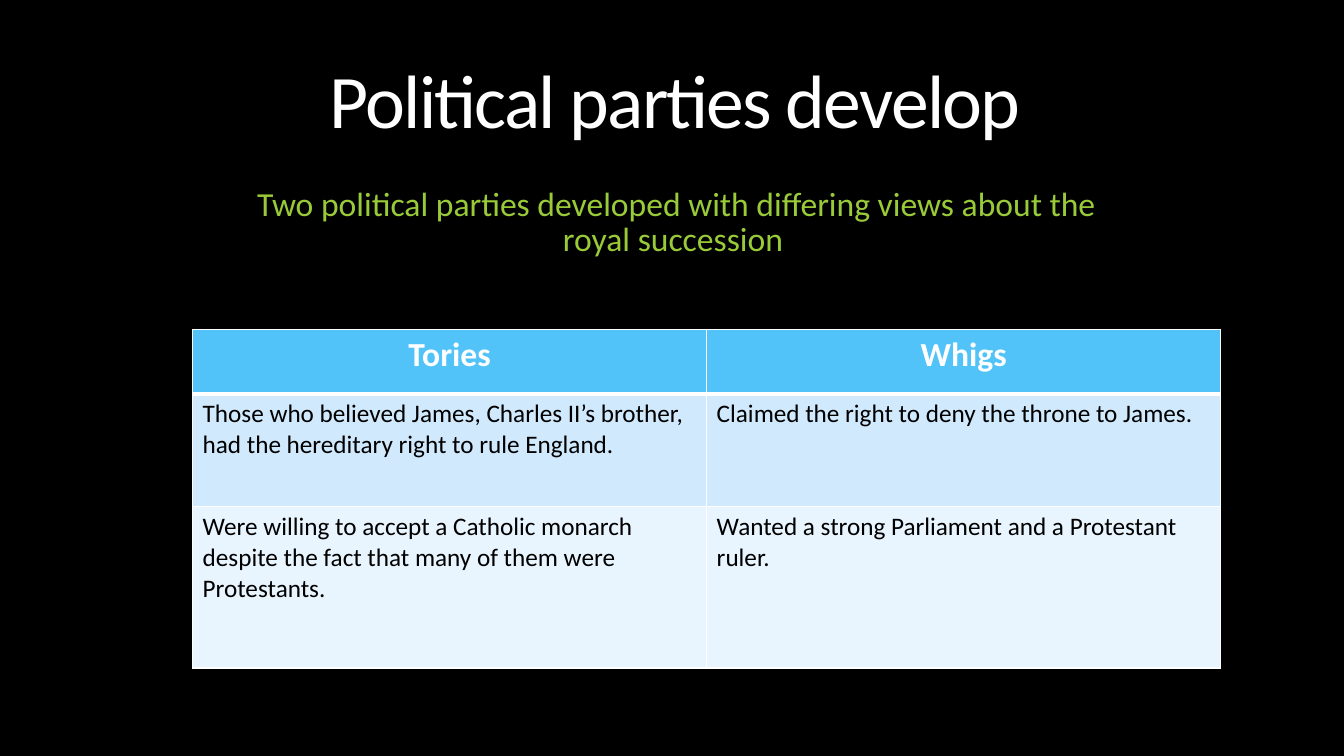
from dataclasses import dataclass

from lxml import etree
from pptx import Presentation
from pptx.dml.color import RGBColor
from pptx.enum.text import MSO_ANCHOR, MSO_AUTO_SIZE, PP_ALIGN
from pptx.oxml.ns import qn
from pptx.util import Emu, Inches, Pt

CENTER, LEFT = PP_ALIGN.CENTER, PP_ALIGN.LEFT
MIDDLE, TOP = MSO_ANCHOR.MIDDLE, MSO_ANCHOR.TOP
NO_AUTOFIT = MSO_AUTO_SIZE.NONE
SLIDE_WIDTH, SLIDE_HEIGHT = Inches(13.33), Inches(7.5)
TITLE_ONLY_LAYOUT = 5
FONT = "Calibri"
BLACK, WHITE, GREEN = "000000", "FFFFFF", "99CB38"
LINE_SPACING = 0.85
THIN, THICK = 1, 3


@dataclass(frozen=True)
class Area:
    """A box given as shares of the slide's width and height."""
    left: float
    top: float
    width: float
    height: float

    def lengths(self) -> tuple[Emu, Emu, Emu, Emu]:
        return (Emu(round(self.left * SLIDE_WIDTH)), Emu(round(self.top * SLIDE_HEIGHT)),
                Emu(round(self.width * SLIDE_WIDTH)), Emu(round(self.height * SLIDE_HEIGHT)))


@dataclass(frozen=True)
class TextStyle:
    size: float
    color: str
    alignment: PP_ALIGN = LEFT
    bold: bool = False


@dataclass(frozen=True)
class TableRow:
    texts: tuple[str, str]
    share: float
    fill: str
    style: TextStyle
    top_line: float = THIN
    bottom_line: float = THIN


TITLE_AREA = Area(0.1523, 0.0293, 0.7, 0.22)
SUBTITLE_AREA = Area(0.147, 0.244, 0.7, 0.5267)
TABLE_AREA = Area(0.1433, 0.436, 0.765, 0.4477)

TITLE_STYLE = TextStyle(54, WHITE, CENTER)
SUBTITLE_STYLE = TextStyle(24, GREEN, CENTER)
HEADER_STYLE = TextStyle(24, WHITE, CENTER, bold=True)
BODY_STYLE = TextStyle(18, BLACK)

PARTY_ROWS = (
    TableRow(("Tories", "Whigs"), 0.19, "51C3F9", HEADER_STYLE, bottom_line=THICK),
    TableRow(("Those who believed James, Charles II’s brother, had the hereditary right to rule England.",
              "Claimed the right to deny the throne to James."),
             0.333, "D0E9FD", BODY_STYLE, top_line=THICK),
    TableRow(("Were willing to accept a Catholic monarch despite the fact that many of them were Protestants.",
              "Wanted a strong Parliament and a Protestant ruler."),
             0.477, "E9F5FE", BODY_STYLE),
)


def rgb(color: str) -> RGBColor:
    return RGBColor.from_string(color)


def write_text(text_frame, text: str, style: TextStyle):
    """Fill the first paragraph with one run; return the paragraph and the run."""
    paragraph = text_frame.paragraphs[0]
    paragraph.alignment = style.alignment
    run = paragraph.add_run()
    run.text = text
    run.font.name = FONT
    run.font.size = Pt(style.size)
    run.font.bold = style.bold
    run.font.color.rgb = rgb(style.color)
    return paragraph, run


def add_title(slide) -> None:
    title = slide.shapes.title
    title.left, title.top, title.width, title.height = TITLE_AREA.lengths()
    text_frame = title.text_frame
    text_frame.word_wrap = True
    text_frame.auto_size = NO_AUTOFIT
    text_frame.vertical_anchor = MIDDLE
    paragraph, run = write_text(text_frame, "Political parties develop", TITLE_STYLE)
    paragraph.line_spacing = LINE_SPACING
    run.font._element.set("spc", "-120")


def add_subtitle(slide) -> None:
    text_frame = slide.shapes.add_textbox(*SUBTITLE_AREA.lengths()).text_frame
    text_frame.word_wrap = True
    text_frame.auto_size = NO_AUTOFIT
    text_frame.vertical_anchor = TOP
    paragraph, _ = write_text(
        text_frame,
        "Two political parties developed with differing views about the royal succession",
        SUBTITLE_STYLE)
    paragraph.line_spacing = LINE_SPACING
    paragraph.space_before = Pt(13)
    properties = paragraph._p.get_or_add_pPr()
    properties.set("marL", str(Inches(0.1)))
    properties.set("indent", str(Inches(-0.1)))
    etree.SubElement(properties, qn("a:buChar"), char=" ")


def add_border(cell, side: str, width: float) -> None:
    line = etree.SubElement(cell._tc.get_or_add_tcPr(), qn(f"a:ln{side}"), w=str(Pt(width)))
    fill = etree.SubElement(line, qn("a:solidFill"))
    etree.SubElement(fill, qn("a:srgbClr"), val=WHITE)


def format_cell(cell, text: str, row: TableRow) -> None:
    """Write the text, then the borders, which must precede the fill in the XML."""
    write_text(cell.text_frame, text, row.style)
    for side, width in (("L", THIN), ("R", THIN), ("T", row.top_line), ("B", row.bottom_line)):
        add_border(cell, side, width)
    cell.fill.solid()
    cell.fill.fore_color.rgb = rgb(row.fill)


def add_party_table(slide) -> None:
    left, top, width, height = TABLE_AREA.lengths()
    column_count = len(PARTY_ROWS[0].texts)
    table = slide.shapes.add_table(len(PARTY_ROWS), column_count, left, top, width, height).table
    for column in table.columns:
        column.width = Emu(width // column_count)
    for row_index, row in enumerate(PARTY_ROWS):
        table.rows[row_index].height = Emu(round(height * row.share))
        for column_index, text in enumerate(row.texts):
            format_cell(table.cell(row_index, column_index), text, row)


def main() -> None:
    presentation = Presentation()
    presentation.slide_width, presentation.slide_height = SLIDE_WIDTH, SLIDE_HEIGHT
    slide = presentation.slides.add_slide(presentation.slide_layouts[TITLE_ONLY_LAYOUT])
    background = slide.background.fill
    background.solid()
    background.fore_color.rgb = rgb(BLACK)
    add_title(slide)
    add_subtitle(slide)
    add_party_table(slide)
    presentation.save("out.pptx")


if __name__ == "__main__":
    main()
